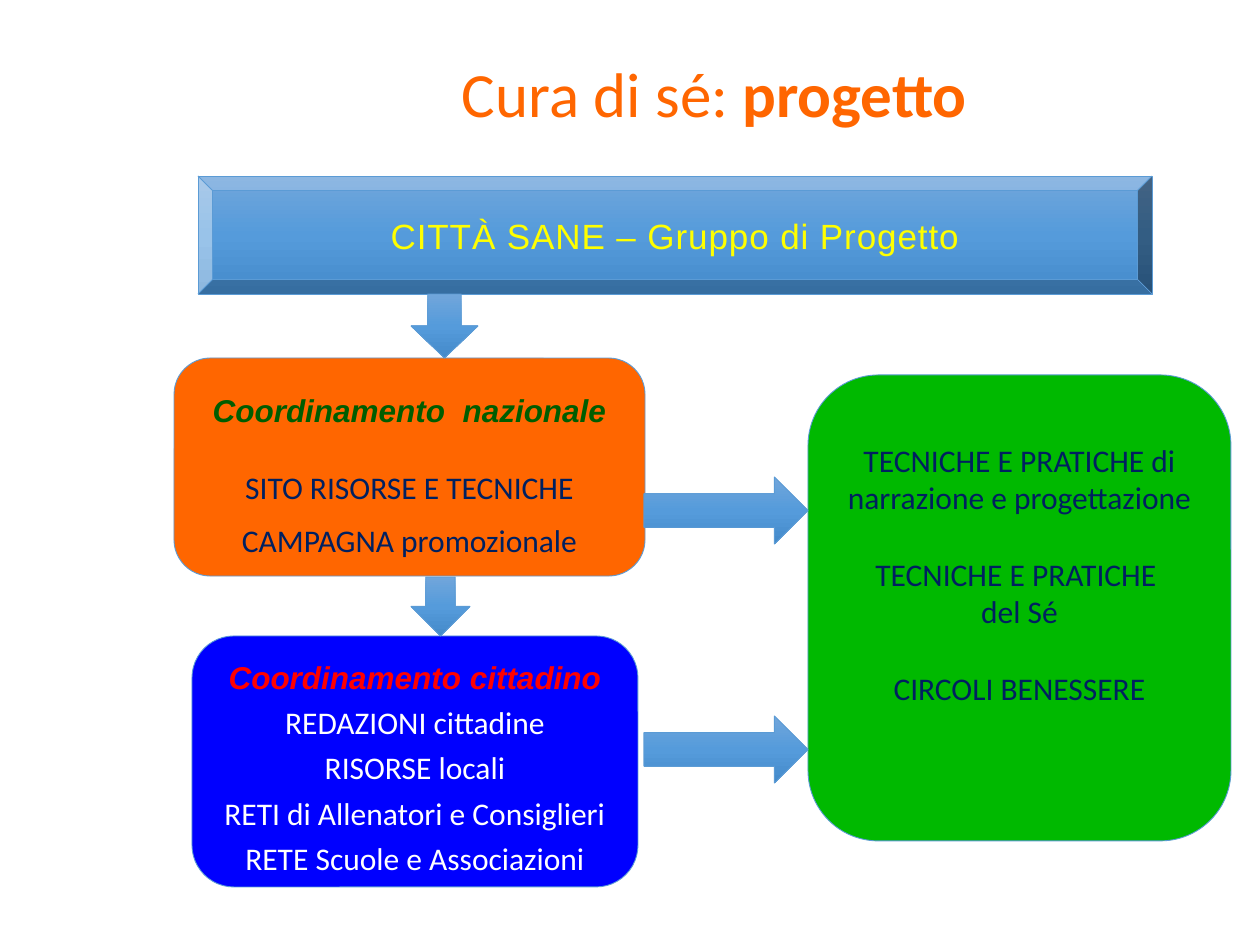
from copy import deepcopy
from pptx import Presentation
from pptx.dml.color import RGBColor
from pptx.enum.shapes import MSO_SHAPE
from pptx.enum.text import MSO_ANCHOR, PP_ALIGN
from pptx.util import Pt

PX = 914400 // 126
ORANGE = RGBColor(0xFF, 0x66, 0x00)
GREEN = RGBColor(0x00, 0xB9, 0x00)
BLUE = RGBColor(0x00, 0x00, 0xFF)
EDGE = RGBColor(0x5B, 0x9B, 0xD5)
LIGHT = RGBColor(0x71, 0xA6, 0xDB)
MID = RGBColor(0x55, 0x9B, 0xDB)
DARK = RGBColor(0x44, 0x8A, 0xCA)
YELLOW = RGBColor(0xFF, 0xFF, 0x00)
FOREST = RGBColor(0x00, 0x5D, 0x00)
RED = RGBColor(0xFF, 0x00, 0x00)
NAVY = RGBColor(0x00, 0x20, 0x60)
WHITE = RGBColor(0xFF, 0xFF, 0xFF)


def write(para, text, color, size=18, font="Calibri", bold=False, italic=False,
          lines=None, before=0):
    para.alignment = PP_ALIGN.CENTER
    para.line_spacing = lines
    para.space_before = Pt(before)
    run = para.add_run()
    run.text = text
    run.font.name, run.font.size = font, Pt(size)
    run.font.bold, run.font.italic = bold, italic
    run.font.color.rgb = color
    return run


def draw(kind, box, color=None):
    shape = slide.shapes.add_shape(kind, *[n * PX for n in box])
    shape.shadow.inherit = False
    shape.line.color.rgb = EDGE
    shape.line.width = Pt(0.5)
    if color is not None:
        shape.fill.solid()
        shape.fill.fore_color.rgb = color
        return shape
    # Three-stop gradient, light at the top
    shape.fill.gradient()
    shape.fill.gradient_angle = 270
    first = shape._element.xpath(".//a:gs")[0]
    first.addnext(deepcopy(first))
    for stop, tint, pos in zip(shape.fill.gradient_stops, (LIGHT, MID, DARK), (0, 0.5, 1)):
        stop.color.rgb = tint
        stop.position = pos
    return shape


prs = Presentation()
prs.slide_width, prs.slide_height = 1260 * PX, 945 * PX
slide = prs.slides.add_slide(prs.slide_layouts[5])

# Title
title = slide.shapes.title
title.left, title.top, title.width, title.height = [n * PX for n in (198, 38, 1033, 118)]
title.text_frame.vertical_anchor = MSO_ANCHOR.MIDDLE
head = title.text_frame.paragraphs[0]
write(head, "Cura di sé: ", ORANGE, size=36, lines=0.9)
write(head, "progetto", ORANGE, size=36, bold=True, lines=0.9)

# Top banner
banner = draw(MSO_SHAPE.BEVEL, (198, 176, 954, 118))
banner.text_frame.vertical_anchor = MSO_ANCHOR.MIDDLE
run = write(banner.text_frame.paragraphs[0], "CITTÀ SANE – Gruppo di Progetto",
            YELLOW, size=20, font="Arial")
run.font._element.set("spc", "50")

# Rounded boxes: place, fill, anchor, top and bottom margin, lines of text
lead = dict(font="Arial", bold=True, italic=True)
boxes = [
    ((808, 375, 423, 466), GREEN, MSO_ANCHOR.TOP, 45, 0, [
        ("TECNICHE E PRATICHE di narrazione e progettazione", NAVY, {}),
        ("TECNICHE E PRATICHE ", NAVY, dict(before=22)),
        ("del Sé", NAVY, {}),
        ("CIRCOLI BENESSERE", NAVY, dict(before=22))]),
    ((174, 358, 471, 218), ORANGE, MSO_ANCHOR.MIDDLE, 6, 6, [
        ("Coordinamento  nazionale", FOREST, dict(lead, lines=1.4)),
        ("SITO RISORSE E TECNICHE", NAVY, dict(lines=1.4, before=14)),
        ("CAMPAGNA promozionale", NAVY, dict(lines=1.4))]),
    ((192, 636, 446, 251), BLUE, MSO_ANCHOR.MIDDLE, 4, 0, [
        ("Coordinamento cittadino", RED, dict(lead, lines=1.2)),
        ("REDAZIONI cittadine", WHITE, dict(lines=1.2)),
        ("RISORSE locali", WHITE, dict(lines=1.2)),
        ("RETI di Allenatori e Consiglieri", WHITE, dict(lines=1.2)),
        ("RETE Scuole e Associazioni", WHITE, dict(lines=1.2))]),
]
for box, color, anchor, top, bottom, rows in boxes:
    frame = draw(MSO_SHAPE.ROUNDED_RECTANGLE, box, color).text_frame
    frame.word_wrap = True
    frame.vertical_anchor = anchor
    frame.margin_top, frame.margin_bottom = top * PX, bottom * PX
    for i, (text, ink, style) in enumerate(rows):
        para = frame.add_paragraph() if i else frame.paragraphs[0]
        write(para, text, ink, **style)

# Block arrows
for y in (477, 716):
    draw(MSO_SHAPE.RIGHT_ARROW, (644, y, 164, 67))
for box in ((411, 294, 67, 64), (411, 577, 59, 59)):
    draw(MSO_SHAPE.DOWN_ARROW, box)

prs.save("out.pptx")
